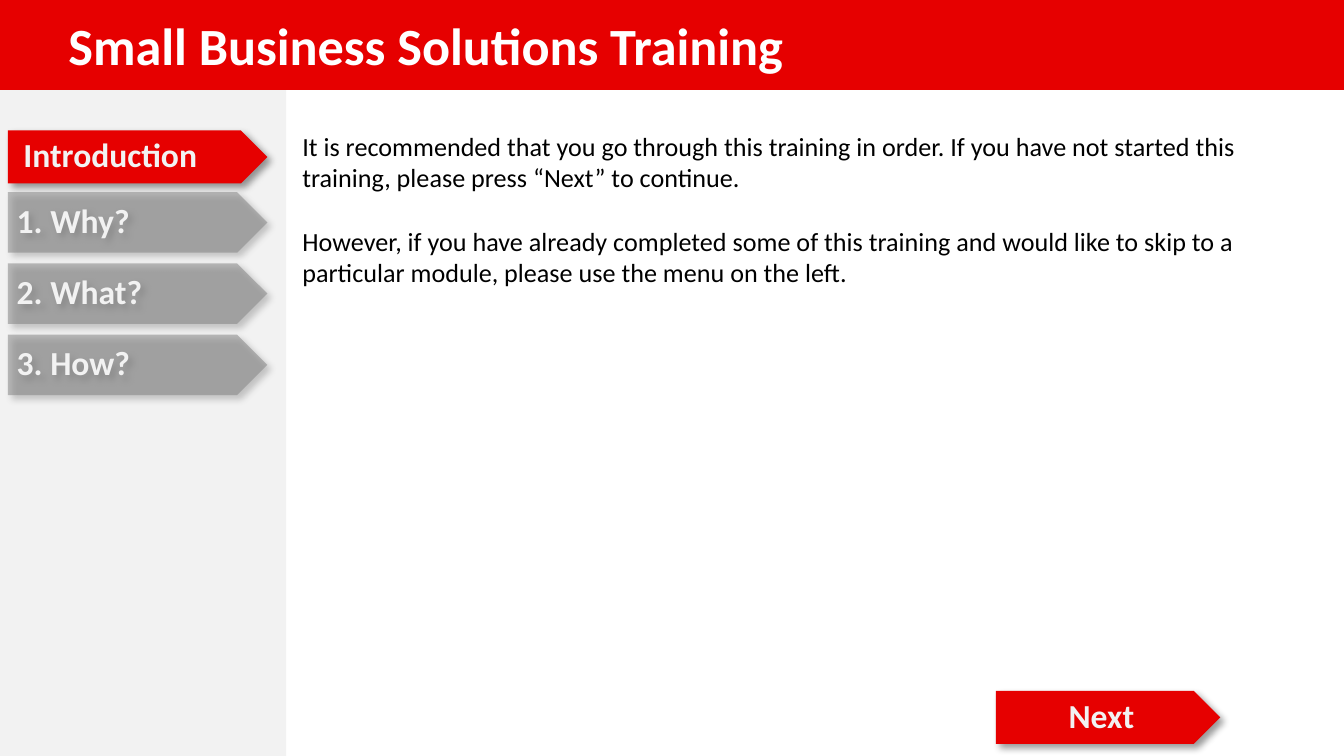
from lxml.etree import SubElement
from pptx import Presentation
from pptx.dml.color import RGBColor
from pptx.enum.shapes import MSO_SHAPE as Shape
from pptx.enum.text import MSO_ANCHOR as Anchor, PP_ALIGN as Align
from pptx.oxml.ns import qn
from pptx.util import Pt

PX = 4572  # EMU, 200 px to the inch
RED = RGBColor(0xE6, 0x00, 0x00)
GREY = RGBColor(0x80, 0x80, 0x80)
PALE = RGBColor(0xF2, 0xF2, 0xF2)
WHITE = RGBColor(0xFF, 0xFF, 0xFF)
BLACK = RGBColor(0x00, 0x00, 0x00)

deck = Presentation()
deck.slide_width, deck.slide_height = 2000 * PX, 1125 * PX
page = deck.slides.add_slide(deck.slide_layouts[6])


def add_block(kind, left, top, width, height, color):
    block = page.shapes.add_shape(kind, left * PX, top * PX, width * PX, height * PX)
    block.shadow.inherit = False
    block.fill.solid()
    block.fill.fore_color.rgb = color
    block.line.fill.background()
    return block


def write(box, texts, size, color, bold, align=Align.LEFT, inset=0, anchor=Anchor.MIDDLE):
    frame = box.text_frame
    frame.word_wrap = True
    frame.vertical_anchor = anchor
    frame.margin_left = inset * PX
    frame.margin_top = frame.margin_right = frame.margin_bottom = 0
    for index, text in enumerate(texts):
        para = frame.add_paragraph() if index else frame.paragraphs[0]
        para.alignment = align
        if index:
            para.space_before = Pt(17)
        span = para.add_run()
        span.text = text
        span.font.name = "Calibri"
        span.font.size = Pt(size)
        span.font.bold = bold
        span.font.color.rgb = color
    return frame


# Body text
body = page.shapes.add_textbox(450 * PX, 194 * PX, 1494 * PX, 578 * PX)
write(body, [
    "It is recommended that you go through this training in order. "
    "If you have not started this training, please press “Next” to continue.",
    "However, if you have already completed some of this training and would like "
    "to skip to a particular module, please use the menu on the left.",
], 14, BLACK, False, anchor=Anchor.TOP)

# Arrow buttons: label, left, top, width, height, color, opacity, align, inset
buttons = [
    ("Next", 1482, 1028, 334, 79, RED, 100, Align.CENTER, 0),
    ("Introduction", 12, 194, 386, 79, RED, 100, Align.LEFT, 23),
]
for row, label in enumerate(["1. Why?", "2. What?", "3. How?"]):
    buttons.append((label, 12, 286 + 106 * row, 386, 90, GREY, 50, Align.LEFT, 13))

# Sidebar, behind the buttons
add_block(Shape.RECTANGLE, 0, 0, 426, 1125, PALE)

for label, left, top, width, height, color, opacity, align, inset in buttons:
    button = add_block(Shape.PENTAGON, left, top, width, height, color)
    frame = write(button, [label], 18, PALE, True, align, inset)
    frame.paragraphs[0].line_spacing = 0.9
    properties = button.element.spPr
    if opacity < 100:
        fill_color = properties.find(qn("a:solidFill"))[0]
        SubElement(fill_color, qn("a:alpha"), val=str(opacity * 1000))
    # Soft shadow to the lower right
    shadow = SubElement(properties.find(qn("a:effectLst")), qn("a:outerShdw"),
                        blurRad=str(Pt(4)), dist=str(Pt(3)), dir=str(45 * 60000),
                        algn="tl", rotWithShape="0")
    shadow_color = SubElement(shadow, qn("a:srgbClr"), val=str(BLACK))
    SubElement(shadow_color, qn("a:alpha"), val="40000")

# Title bar
add_block(Shape.RECTANGLE, 0, 0, 2000, 134, RED)
title = page.shapes.add_textbox(102 * PX, 0, 1428 * PX, 134 * PX)
write(title, ["Small Business Solutions Training"], 28, WHITE, True)

deck.save("out.pptx")
